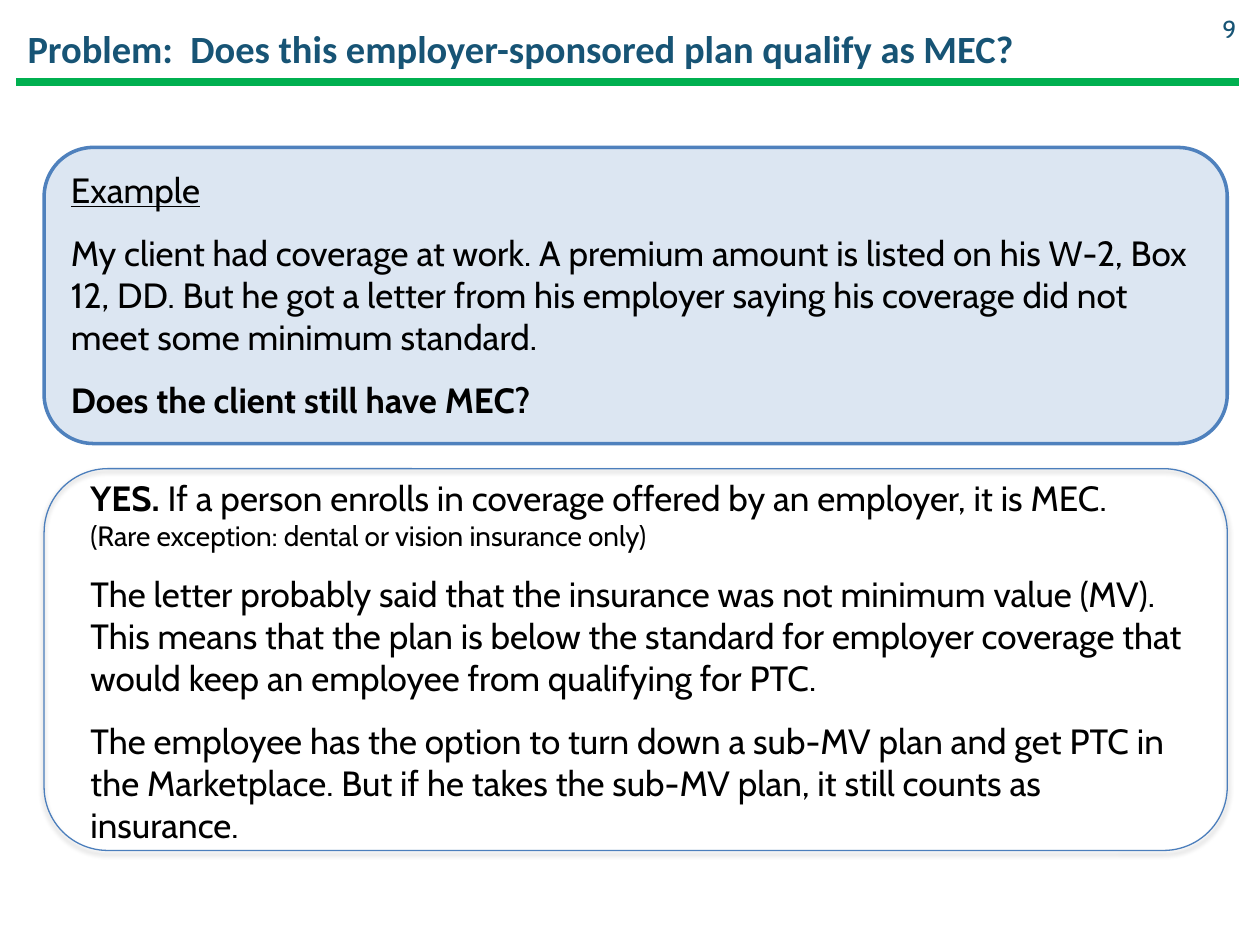
from lxml import etree
from pptx import Presentation
from pptx.dml.color import RGBColor
from pptx.enum.shapes import MSO_CONNECTOR, MSO_SHAPE
from pptx.enum.text import MSO_ANCHOR, MSO_AUTO_SIZE, PP_ALIGN
from pptx.oxml import parse_xml
from pptx.oxml.ns import nsdecls, qn
from pptx.util import Inches, Pt

STRAIGHT = MSO_CONNECTOR.STRAIGHT
ROUNDED = MSO_SHAPE.ROUNDED_RECTANGLE
TOP, MIDDLE = MSO_ANCHOR.TOP, MSO_ANCHOR.MIDDLE
GROW = MSO_AUTO_SIZE.SHAPE_TO_FIT_TEXT
LEFT, RIGHT = PP_ALIGN.LEFT, PP_ALIGN.RIGHT

THEME = {
    "heading_font": "Calibri", "body_font": "Cabin",
    "heading": "175475", "text": "000000", "rule": "00B050",
    "example_fill": "DCE6F2", "example_line": "4F81BD", "answer_line": "4B7EBC",
    "title_size": 22, "number_size": 14, "body_size": 20, "aside_size": 16,
    "paragraph_gap": 12,
}

TITLE = "Problem:  Does this employer-sponsored plan qualify as MEC?"
NUMBER = "9"
EXAMPLE = [
    [("Example", {"underline": True})],
    [("My client had coverage at work. A premium amount is listed on his W-2, Box 12, DD. "
      "But he got a letter from his employer saying his coverage did not meet some "
      "minimum standard.", {})],
    [("Does the client still have MEC?", {"bold": True})],
]
ANSWER = [
    [("YES. ", {"bold": True}),
     ("If a person enrolls in coverage offered by an employer, it is MEC.", {}),
     ("\v", {}),
     ("(Rare exception: dental or vision insurance only)", {"size": THEME["aside_size"]})],
    [("The letter probably said that the insurance was not minimum value (MV). This means "
      "that the plan is below the standard for employer coverage that would keep an "
      "employee from qualifying for PTC.", {})],
    [("The employee has the option to turn down a sub-MV plan and get PTC in the "
      "Marketplace. But if he takes the sub-MV plan, it still counts as insurance.", {})],
]

PANEL_LEFT, PANEL_WIDTH = 0.35, 9.39


def rgb(name):
    return RGBColor.from_string(THEME[name])


def style_run(run, font, color, size, bold=False, underline=False):
    run.font.name = THEME[font]
    run.font.color.rgb = rgb(color)
    run.font.size = Pt(size)
    run.font.bold = bold
    run.font.underline = underline


def add_heading(slide, text, box, font, size, align, anchor, bold):
    frame = slide.shapes.add_textbox(*map(Inches, box)).text_frame
    frame.word_wrap = True
    frame.vertical_anchor = anchor
    frame.text = text
    paragraph = frame.paragraphs[0]
    paragraph.alignment = align
    style_run(paragraph.runs[0], font, "heading", size, bold)


def add_panel(slide, top, height, line, width):
    panel = slide.shapes.add_shape(
        ROUNDED, *map(Inches, (PANEL_LEFT, top, PANEL_WIDTH, height)))
    panel.shadow.inherit = False
    panel.fill.background()
    panel.line.color.rgb = rgb(line)
    panel.line.width = Pt(width)
    return panel


def write_body(frame, paragraphs):
    frame.word_wrap = True
    frame.auto_size = GROW
    frame.vertical_anchor = TOP
    for index, pieces in enumerate(paragraphs):
        paragraph = frame.add_paragraph() if index else frame.paragraphs[0]
        paragraph.alignment = LEFT
        paragraph.space_before = Pt(THEME["paragraph_gap"])
        for text, emphasis in pieces:
            if text == "\v":
                paragraph.add_line_break()
                continue
            run = paragraph.add_run()
            run.text = text
            style_run(run, "body_font", "text", **{"size": THEME["body_size"], **emphasis})


def add_soft_shadow(shape):
    effects = shape._element.spPr.find(qn("a:effectLst"))
    effects.append(parse_xml(
        f'<a:outerShdw {nsdecls("a")} blurRad="{Pt(3.1)}" dist="{Pt(1.8)}" '
        'dir="5400000" rotWithShape="0"><a:srgbClr val="000000">'
        '<a:alpha val="35000"/></a:srgbClr></a:outerShdw>'))


def main():
    deck = Presentation()
    deck.slide_width, deck.slide_height = Inches(10), Inches(7.5)
    slide = deck.slides.add_slide(deck.slide_layouts[6])

    rule = slide.shapes.add_connector(STRAIGHT, *map(Inches, (0.13, 0.65, 9.83, 0.65)))
    rule.line.color.rgb = rgb("rule")
    rule.line.width = Pt(4.75)
    etree.SubElement(rule._element.spPr, qn("a:effectLst"))

    add_heading(slide, TITLE, (0.12, 0.1, 9.61, 0.57), "heading_font",
                THEME["title_size"], LEFT, MIDDLE, True)
    add_heading(slide, NUMBER, (9.4, 0.06, 0.51, 0.4), "body_font",
                THEME["number_size"], RIGHT, TOP, False)

    example = add_panel(slide, 1.17, 2.35, "example_line", 2)
    example.fill.solid()
    example.fill.fore_color.rgb = rgb("example_fill")
    write_body(example.text_frame, EXAMPLE)

    answer = add_panel(slide, 3.72, 3.03, "answer_line", 0.75)
    add_soft_shadow(answer)
    answer_text = slide.shapes.add_textbox(*map(Inches, (0.62, 3.73, 8.9, 3.06)))
    write_body(answer_text.text_frame, ANSWER)

    deck.save("out.pptx")


if __name__ == "__main__":
    main()
